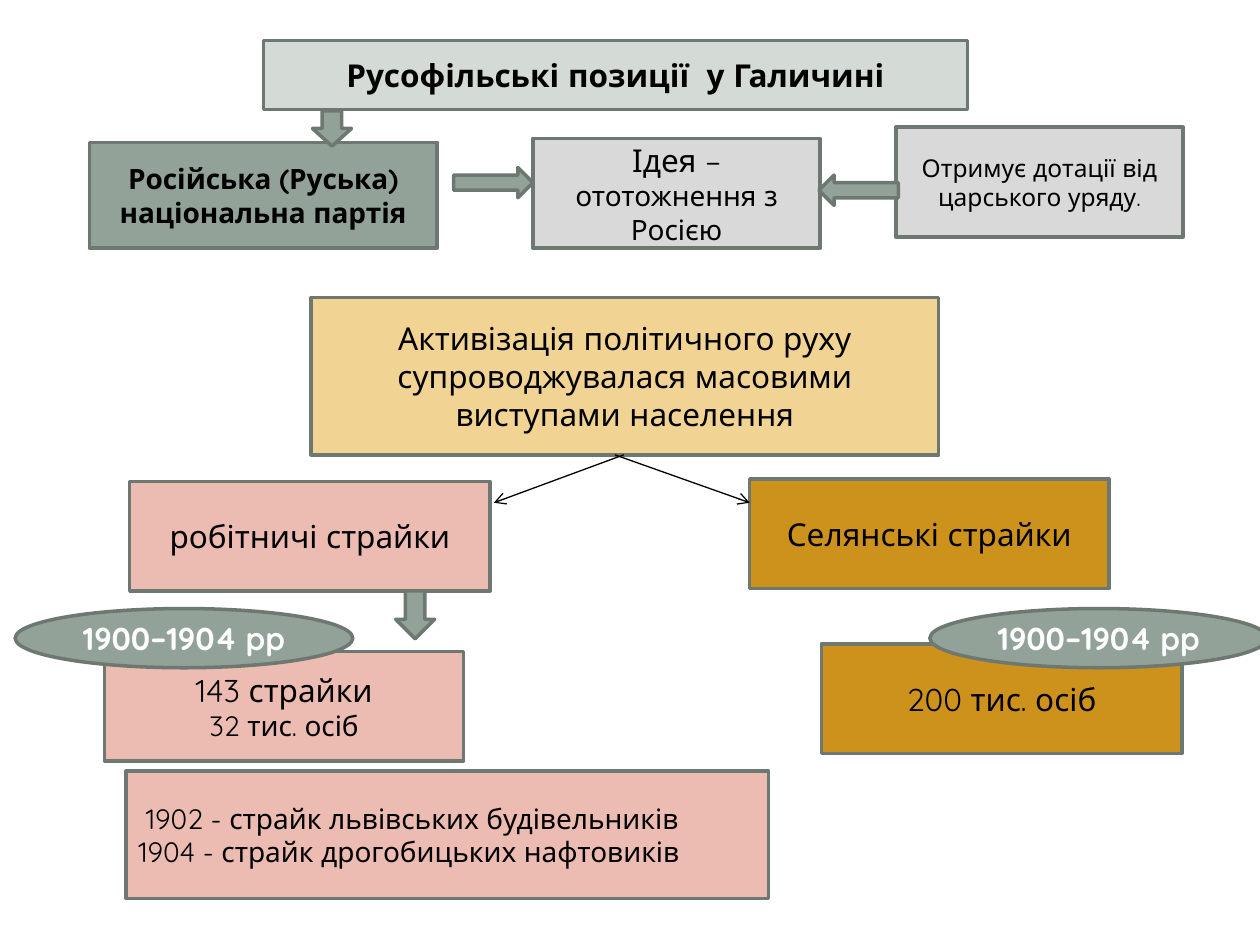
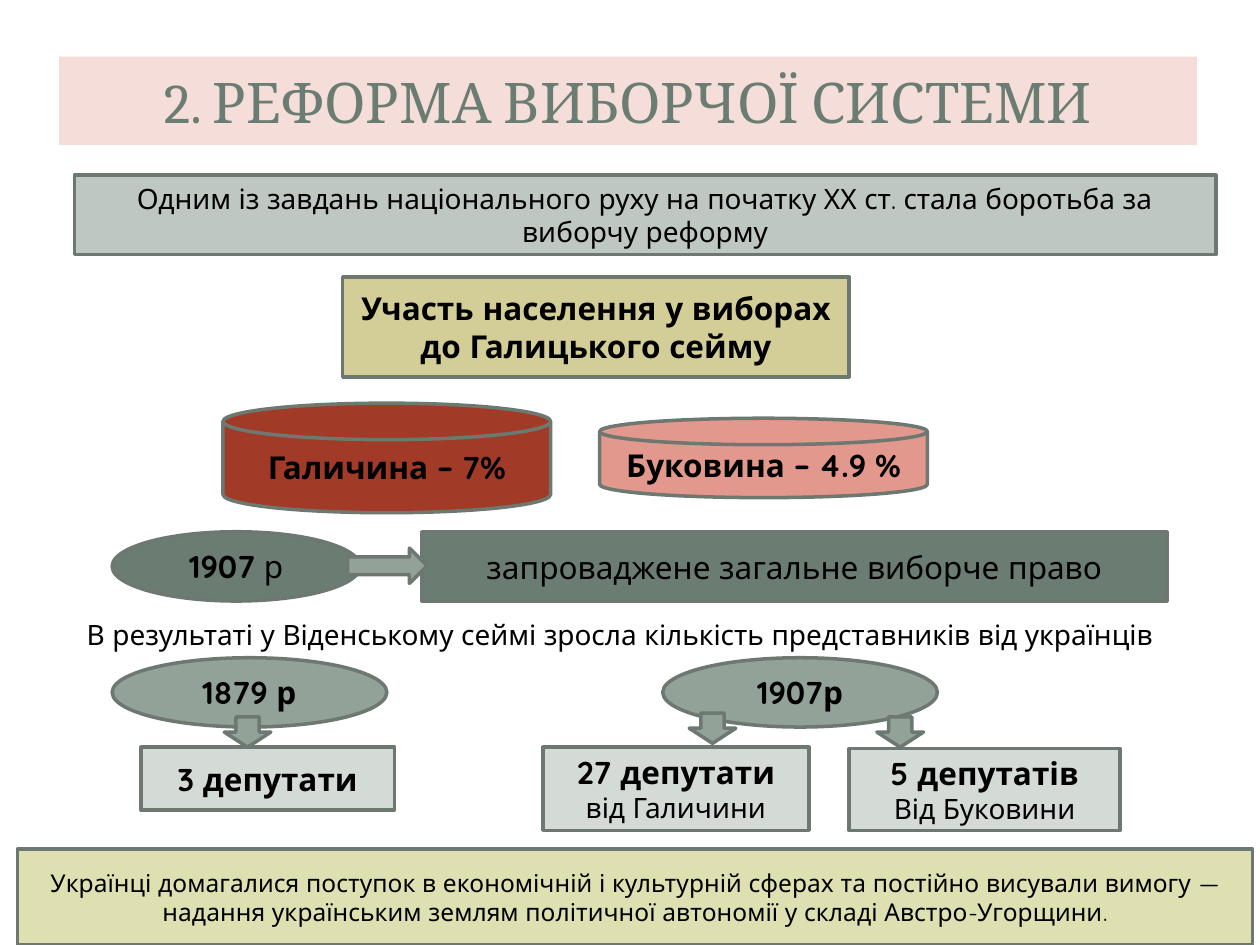
"""Build two slides on Galician politics and the electoral reform."""
from lxml.etree import SubElement
from pptx import Presentation
from pptx.dml.color import RGBColor
from pptx.enum.shapes import MSO_CONNECTOR, MSO_SHAPE
from pptx.enum.text import MSO_ANCHOR, PP_ALIGN
from pptx.oxml.ns import qn
from pptx.util import Inches, Pt

BLACK = RGBColor(0x00, 0x00, 0x00)
WHITE = RGBColor(0xFF, 0xFF, 0xFF)
OUTLINE = RGBColor(0x6D, 0x78, 0x71)
SAGE = RGBColor(0x93, 0xA2, 0x99)
LIGHT_SAGE = RGBColor(0xD4, 0xDA, 0xD6)
MID_SAGE = RGBColor(0xBE, 0xC7, 0xC2)
DARK_SAGE = RGBColor(0x6B, 0x7D, 0x72)
GREY = RGBColor(0xD9, 0xD9, 0xD9)
SAND = RGBColor(0xF1, 0xD3, 0x94)
OCHRE = RGBColor(0xCD, 0x92, 0x1B)
PINK = RGBColor(0xEC, 0xBB, 0xB2)
PALE_PINK = RGBColor(0xF5, 0xDD, 0xD9)
CORAL = RGBColor(0xE2, 0x98, 0x8C)
BRICK = RGBColor(0xA2, 0x3A, 0x28)
OLIVE = RGBColor(0xD3, 0xCE, 0x98)
LIGHT_OLIVE = RGBColor(0xDF, 0xE0, 0xB1)

BODY_FONT = "Quicksand"
TITLE_FONT = "Cambria"
PROCESS = MSO_SHAPE.FLOWCHART_PROCESS
DISK = MSO_SHAPE.FLOWCHART_MAGNETIC_DISK
OVAL = MSO_SHAPE.OVAL
DOWN = MSO_SHAPE.DOWN_ARROW
LEFT = MSO_SHAPE.LEFT_ARROW
RIGHT = MSO_SHAPE.RIGHT_ARROW


def write(box, lines, color=BLACK, align=PP_ALIGN.CENTER, font=BODY_FONT):
    """Fill a box with lines, each a list of (text, size, bold) spans."""
    frame = box.text_frame
    frame.word_wrap = True
    for index, line in enumerate(lines):
        para = frame.paragraphs[0] if index == 0 else frame.add_paragraph()
        para.alignment = align
        for text, size, bold in line:
            span = para.add_run()
            span.text = text
            span.font.name = font
            span.font.size = Pt(size)
            span.font.bold = bold
            span.font.color.rgb = color


def add_box(page, kind, place, fill, lines=(), color=BLACK, align=PP_ALIGN.CENTER):
    """Add an outlined preset shape with its text."""
    box = page.shapes.add_shape(kind, *map(Inches, place))
    box.shadow.inherit = False
    box.fill.solid()
    box.fill.fore_color.rgb = fill
    box.line.color.rgb = OUTLINE
    box.line.width = Pt(2)
    box.text_frame.vertical_anchor = MSO_ANCHOR.MIDDLE
    write(box, lines, color, align)


deck = Presentation()
deck.slide_width = Inches(10)
deck.slide_height = Inches(7.5)
blank = deck.slide_layouts[6]

movement = deck.slides.add_slide(blank)
movement_boxes = [
    (PROCESS, (6.52, 5.11, 2.86, 0.87), OCHRE, [[("200 тис. осіб", 18, False)]]),
    (PROCESS, (2.09, 0.32, 5.59, 0.55), LIGHT_SAGE,
     [[("Русофільські позиції  у Галичині", 18, True)]]),
    (PROCESS, (0.71, 1.13, 2.76, 0.84), SAGE,
     [[("Російська (Руська) національна партія", 16, True)]]),
    (DOWN, (2.48, 0.88, 0.31, 0.28), SAGE),
    (PROCESS, (4.23, 1.1, 2.28, 0.87), GREY,
     [[("Ідея – ", 18, False), ("ототожнення з Росією", 16, False)]]),
    (PROCESS, (7.11, 1.01, 2.28, 0.87), GREY,
     [[("Отримує дотації від царського уряду.", 14, False)]]),
    (LEFT, (6.5, 1.39, 0.63, 0.24), SAGE),
    (RIGHT, (3.6, 1.33, 0.63, 0.24), SAGE),
    (PROCESS, (2.47, 2.36, 4.98, 1.25), SAND,
     [[("Активізація політичного руху супроводжувалася масовими виступами населення", 18, False)]]),
    (PROCESS, (1.03, 3.82, 2.86, 0.87), PINK, [[("робітничі страйки", 18, False)]]),
    (PROCESS, (0.83, 5.17, 2.85, 0.87), PINK,
     [[("143 страйки", 18, False)], [("32 тис. осіб", 16, False)]]),
    (PROCESS, (5.95, 3.8, 2.85, 0.87), OCHRE, [[("Селянські страйки", 18, False)]]),
    (DOWN, (3.14, 4.69, 0.31, 0.38), SAGE),
    (PROCESS, (1, 6.12, 5.1, 1.01), PINK,
     [[(" 1902 - страйк львівських будівельників", 16, False)],
      [("1904 - страйк дрогобицьких нафтовиків", 16, False)]], BLACK, PP_ALIGN.LEFT),
]
for item in movement_boxes:
    add_box(movement, *item)

for period_left in (0.12, 7.38):
    add_box(movement, OVAL, (period_left, 4.83, 2.68, 0.47), SAGE,
            [[("1900–1904 pp", 18, True)]], WHITE)

for start_x, end_x in ((4.88, 5.95), (4.95, 3.92)):
    branch = movement.shapes.add_connector(
        MSO_CONNECTOR.STRAIGHT, Inches(start_x), Inches(3.61), Inches(end_x), Inches(3.99))
    branch.line.color.rgb = BLACK
    branch.line.width = Pt(0.75)
    SubElement(branch.line._get_or_add_ln(), qn("a:tailEnd"), type="arrow")
    SubElement(branch._element.spPr, qn("a:effectLst"))

reform = deck.slides.add_slide(blank)
title = reform.shapes.add_textbox(Inches(0.47), Inches(0.45), Inches(9.03), Inches(0.7))
title.fill.solid()
title.fill.fore_color.rgb = PALE_PINK
title.text_frame.vertical_anchor = MSO_ANCHOR.MIDDLE
write(title, [[("2. РЕФОРМА ВИБОРЧОЇ СИСТЕМИ", 32, False)]], DARK_SAGE, font=TITLE_FONT)

result = reform.shapes.add_textbox(Inches(0.59), Inches(4.85), Inches(8.9), Inches(0.37))
write(result, [[("В результаті у Віденському сеймі зросла кількість представників від українців",
                 16, False)]], align=PP_ALIGN.LEFT)

reform_boxes = [
    (PROCESS, (0.59, 1.39, 9.06, 0.63), MID_SAGE,
     [[("Одним із завдань національного руху на початку ХХ ст. стала боротьба за виборчу реформу",
        16, False)]]),
    (PROCESS, (2.72, 2.2, 4.02, 0.79), OLIVE,
     [[("Участь населення у виборах до Галицького сейму", 18, True)]]),
    (DISK, (1.77, 3.2, 2.6, 0.87), BRICK, [[("Галичина – 7%", 18, True)]]),
    (DISK, (4.76, 3.32, 2.6, 0.63), CORAL, [[("Буковина – 4.9 %", 18, True)]]),
    (OVAL, (0.89, 4.22, 1.97, 0.55), DARK_SAGE, [[("1907", 18, True), (" р", 18, False)]]),
    (PROCESS, (3.35, 4.22, 5.91, 0.55), DARK_SAGE,
     [[("запроваджене загальне виборче право", 18, False)]]),
    (RIGHT, (2.76, 4.35, 0.63, 0.28), SAGE),
    (OVAL, (0.89, 5.22, 2.18, 0.55), SAGE, [[("1879 р", 18, True)]]),
    (PROCESS, (1.12, 5.93, 2.01, 0.5), LIGHT_SAGE, [[("3 депутати", 18, True)]]),
    (OVAL, (5.26, 5.22, 2.18, 0.55), SAGE, [[("1907р", 18, True)]]),
    (PROCESS, (4.31, 5.93, 2.11, 0.66), LIGHT_SAGE,
     [[("27 депутати", 18, True)], [("від Галичини", 16, False)]]),
    (PROCESS, (6.74, 5.94, 2.15, 0.65), LIGHT_SAGE,
     [[("5 депутатів", 18, True)], [("Від Буковини", 16, False)]]),
    (PROCESS, (0.14, 6.74, 9.8, 0.76), LIGHT_OLIVE,
     [[("Українці домагалися поступок в економічній і культурній сферах та постійно висували "
        "вимогу — надання українським землям політичної автономії у складі Австро-Угорщини.",
        14, False)]]),
]
for item in reform_boxes:
    add_box(reform, *item)

for arrow_left, arrow_top in ((1.78, 5.69), (5.47, 5.66), (6.96, 5.69)):
    add_box(reform, DOWN, (arrow_left, arrow_top, 0.37, 0.24), SAGE)

deck.save("out.pptx")
